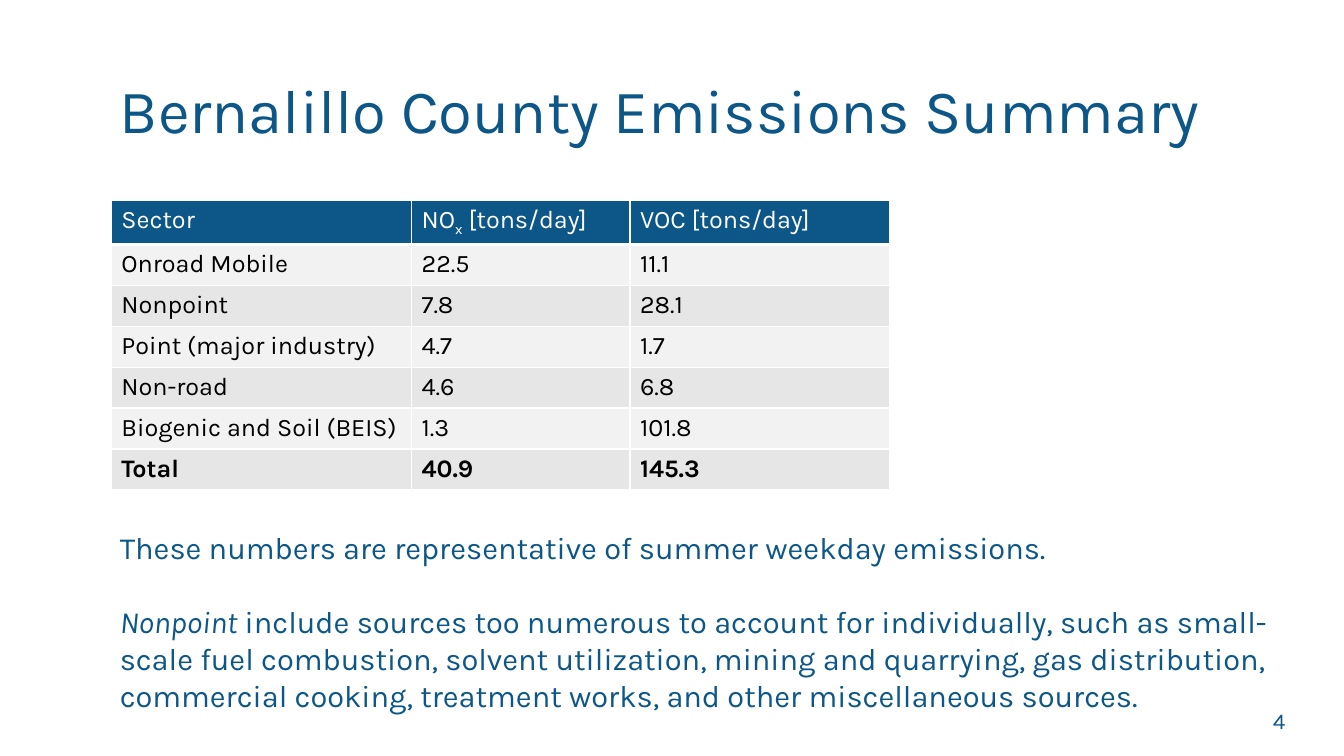
from dataclasses import dataclass

from lxml import etree
from pptx import Presentation
from pptx.dml.color import RGBColor
from pptx.enum import text
from pptx.oxml import ns
from pptx.util import Pt

FONT = "Karla"
COLORS = {
    "blue": "0C5788",
    "white": "FFFFFF",
    "black": "000000",
    "light": "F2F2F2",
    "grey": "E6E6E6",
}


@dataclass
class Run:
    text: str
    italic: bool = False
    subscript: bool = False


@dataclass
class TextBlock:
    left: float
    top: float
    width: float
    height: float
    size: float
    paragraphs: list[list[Run]]
    anchor: text.MSO_ANCHOR = text.MSO_ANCHOR.TOP
    align: text.PP_ALIGN = text.PP_ALIGN.LEFT
    line_spacing: float = 1.0
    gap: float = 0


def write_paragraph(paragraph, runs: list[Run], size: float, color: str, bold: bool = False) -> None:
    font = paragraph.font
    font.name, font.size, font.bold = FONT, Pt(size), bold
    font.color.rgb = RGBColor.from_string(COLORS[color])
    for part in runs:
        run = paragraph.add_run()
        run.text = part.text
        if part.italic:
            run.font.italic = True
        if part.subscript:
            run._r.get_or_add_rPr().set("baseline", "-25000")


def add_text_block(slide, block: TextBlock) -> None:
    shape = slide.shapes.add_textbox(Pt(block.left), Pt(block.top), Pt(block.width), Pt(block.height))
    frame = shape.text_frame
    frame.word_wrap = True
    frame.vertical_anchor = block.anchor
    for index, runs in enumerate(block.paragraphs):
        paragraph = frame.add_paragraph() if index else frame.paragraphs[0]
        paragraph.alignment = block.align
        paragraph.line_spacing = block.line_spacing
        paragraph.space_before = Pt(block.gap if index else 0)
        write_paragraph(paragraph, runs, block.size, "blue")


def set_borders(cell, bottom: float) -> None:
    properties = cell._tc.get_or_add_tcPr()
    widths = {"lnL": 1, "lnR": 1, "lnT": 1, "lnB": bottom}
    for index, (side, width) in enumerate(widths.items()):
        line = etree.Element(ns.qn(f"a:{side}"), w=str(Pt(width)))
        fill = etree.SubElement(line, ns.qn("a:solidFill"))
        etree.SubElement(fill, ns.qn("a:srgbClr"), val=COLORS["white"])
        properties.insert(index, line)


# Table content
COLUMN_WIDTHS = [214.5, 156, 185.5]
ROW_HEIGHT = 29.2
EMISSIONS = [
    [[Run("Sector")], [Run("NO"), Run("x", subscript=True), Run(" [tons/day]")], [Run("VOC [tons/day]")]],
    *[
        [[Run(value)] for value in row]
        for row in [
            ("Onroad Mobile", "22.5", "11.1"),
            ("Nonpoint", "7.8", "28.1"),
            ("Point (major industry)", "4.7", "1.7"),
            ("Non-road", "4.6", "6.8"),
            ("Biogenic and Soil (BEIS)", "1.3", "101.8"),
            ("Total", "40.9", "145.3"),
        ]
    ],
]


def add_emissions_table(slide, left: float, top: float) -> None:
    row_count = len(EMISSIONS)
    table = slide.shapes.add_table(
        row_count, len(COLUMN_WIDTHS), Pt(left), Pt(top), Pt(sum(COLUMN_WIDTHS)), Pt(ROW_HEIGHT * row_count)
    ).table
    for column, width in zip(table.columns, COLUMN_WIDTHS):
        column.width = Pt(width)
    for row_index, row in enumerate(EMISSIONS):
        table.rows[row_index].height = Pt(ROW_HEIGHT)
        header, total = row_index == 0, row_index == row_count - 1
        fill = "blue" if header else ("grey", "light")[row_index % 2]
        for column_index, runs in enumerate(row):
            cell = table.cell(row_index, column_index)
            cell.fill.solid()
            cell.fill.fore_color.rgb = RGBColor.from_string(COLORS[fill])
            set_borders(cell, bottom=3 if header else 1)
            color = "white" if header else "black"
            write_paragraph(cell.text_frame.paragraphs[0], runs, 18, color, bold=total)


# Text content
TITLE = TextBlock(
    78.5, 28.8, 808, 104.4, 44, [[Run("Bernalillo County Emissions Summary")]],
    anchor=text.MSO_ANCHOR.MIDDLE, line_spacing=0.9,
)
PAGE_NUMBER = TextBlock(
    709.2, 500.4, 216, 28.8, 16, [[Run("4")]],
    anchor=text.MSO_ANCHOR.MIDDLE, align=text.PP_ALIGN.RIGHT,
)
NOTES = TextBlock(
    78.5, 374.4, 856, 140.4, 22,
    [
        [Run("These numbers are representative of summer weekday emissions.")],
        [
            Run("Nonpoint", italic=True),
            Run(
                " include sources too numerous to account for individually, such as small-scale fuel "
                "combustion, solvent utilization, mining and quarrying, gas distribution, commercial "
                "cooking, treatment works, and other miscellaneous sources."
            ),
        ],
    ],
    gap=26,
)


def main() -> None:
    presentation = Presentation()
    presentation.slide_width, presentation.slide_height = Pt(960), Pt(540)
    slide = presentation.slides.add_slide(presentation.slide_layouts[6])
    for block in (TITLE, PAGE_NUMBER, NOTES):
        add_text_block(slide, block)
    add_emissions_table(slide, 79.5, 142.9)
    presentation.save("out.pptx")


if __name__ == "__main__":
    main()
